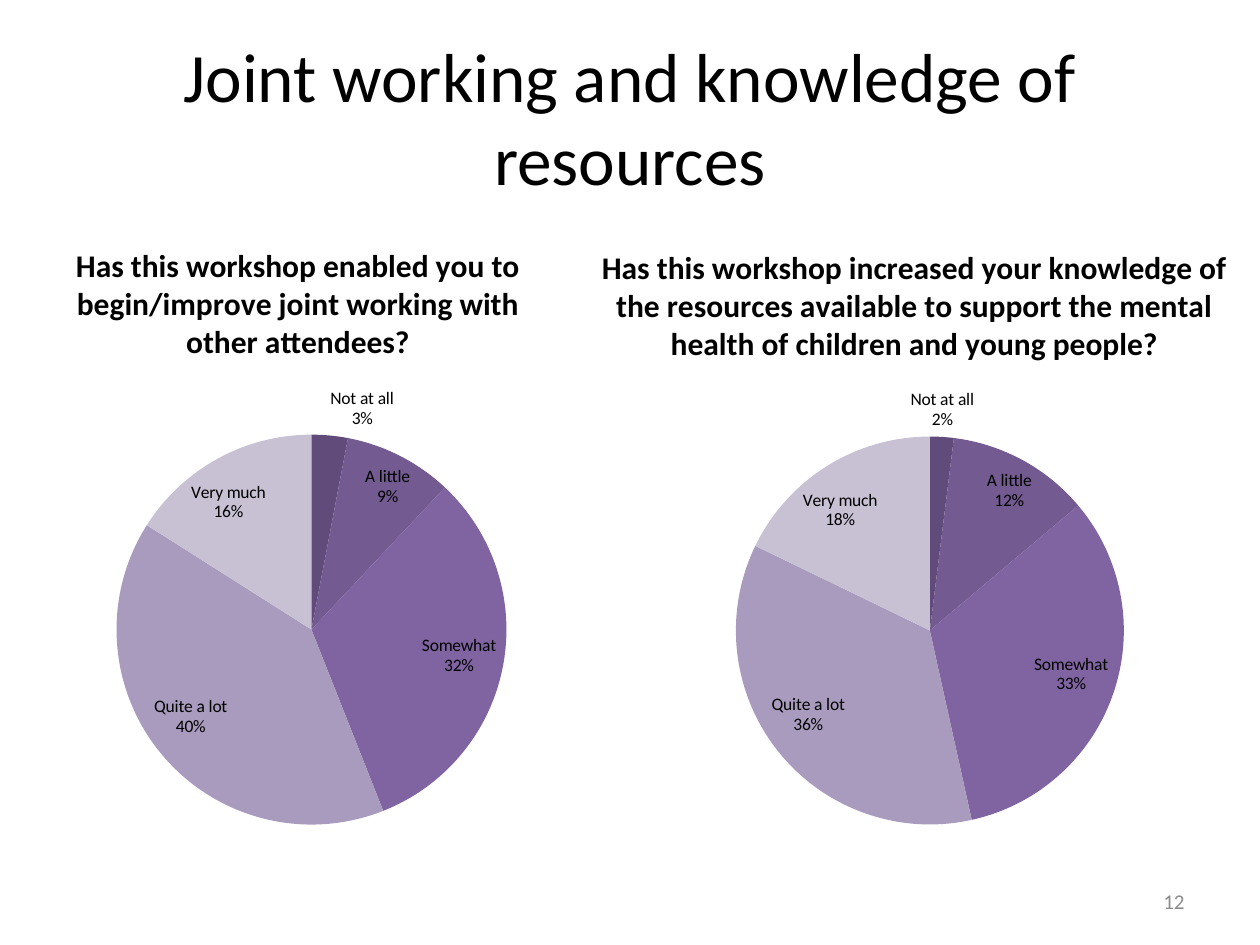
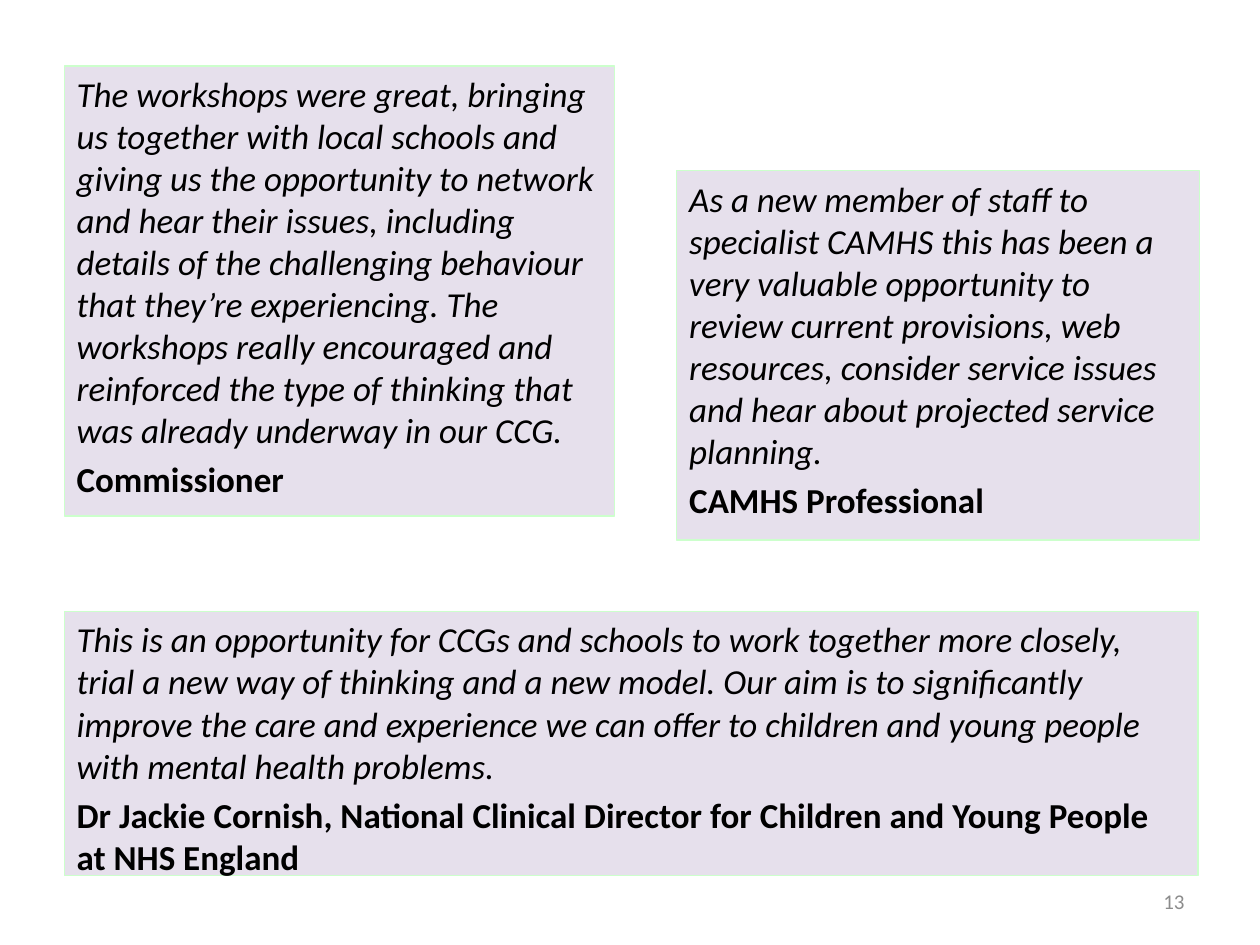
from lxml import etree
from pptx import Presentation
from pptx.chart.data import CategoryChartData
from pptx.dml.color import RGBColor
from pptx.enum.chart import XL_CHART_TYPE, XL_LABEL_POSITION
from pptx.enum.shapes import MSO_SHAPE
from pptx.enum.text import MSO_ANCHOR, MSO_AUTO_SIZE, PP_ALIGN
from pptx.oxml.ns import qn
from pptx.util import Inches, Pt

PIE = XL_CHART_TYPE.PIE
BEST_FIT = XL_LABEL_POSITION.BEST_FIT
RECTANGLE = MSO_SHAPE.RECTANGLE
TOP, MIDDLE = MSO_ANCHOR.TOP, MSO_ANCHOR.MIDDLE
NO_FIT = MSO_AUTO_SIZE.NONE
LEFT, CENTER, RIGHT = PP_ALIGN.LEFT, PP_ALIGN.CENTER, PP_ALIGN.RIGHT

BLACK = RGBColor(0x00, 0x00, 0x00)
GREY = RGBColor(0x8C, 0x8C, 0x8C)
LILAC = RGBColor(0xE6, 0xE0, 0xEC)
PALE_GREEN = RGBColor(0xCC, 0xFF, 0xCC)
SLICE_COLOURS = [
    RGBColor(0x60, 0x4B, 0x7A),
    RGBColor(0x73, 0x5A, 0x91),
    RGBColor(0x80, 0x64, 0xA2),
    RGBColor(0xA9, 0x9B, 0xBE),
    RGBColor(0xC8, 0xC1, 0xD4),
]

FONT = "Calibri"
COLUMNS, ROWS = 20, 15
TITLE_ONLY, TITLE_AND_BODY = 5, 1
ANSWERS = ["Not at all", "A little", "Somewhat", "Quite a lot", "Very much"]


class Deck:
    def __init__(self):
        self.file = Presentation()
        self.file.slide_width = Inches(10)
        self.file.slide_height = Inches(7.5)
        self.page = None

    def place(self, left, top, width, height):
        column = self.file.slide_width / COLUMNS
        row = self.file.slide_height / ROWS
        return [round(left * column), round(top * row),
                round(width * column), round(height * row)]

    def move(self, shape, area):
        shape.left, shape.top, shape.width, shape.height = self.place(*area)

    def style(self, font, size, colour=BLACK, bold=False, italic=False):
        font.name = FONT
        font.size = Pt(size)
        font.color.rgb = colour
        font.bold = bold
        font.italic = italic

    def add_page(self, layout, number):
        self.page = self.file.slides.add_slide(self.file.slide_layouts[layout])
        box = self.page.shapes.add_textbox(*self.place(14.34, 13.9, 4.66, 0.8))
        box.text_frame.word_wrap = True
        box.text_frame.vertical_anchor = MIDDLE
        para = box.text_frame.paragraphs[0]
        para.text = str(number)
        para.alignment = RIGHT
        self.style(para.font, 12, GREY)

    def title(self, text):
        box = self.page.shapes.title
        self.move(box, (1, 0.6, 18, 2.5))
        box.text_frame.auto_size = NO_FIT
        box.text_frame.vertical_anchor = MIDDLE
        para = box.text_frame.paragraphs[0]
        para.text = text
        para.alignment = CENTER
        self.style(para.font, 39.6)

    def drop_title(self):
        title = self.page.shapes.title.element
        title.getparent().remove(title)

    def quote(self, area, words, speaker, in_body=False):
        if in_body:
            box = self.page.placeholders[1]
            self.move(box, area)
        else:
            box = self.page.shapes.add_shape(RECTANGLE, *self.place(*area))
            box.shadow.inherit = False
        box.fill.solid()
        box.fill.fore_color.rgb = LILAC
        box.line.color.rgb = PALE_GREEN
        box.line.width = Pt(0.75)
        frame = box.text_frame
        frame.word_wrap = True
        frame.auto_size = NO_FIT
        frame.vertical_anchor = TOP
        for para, text, is_speaker in (
            (frame.paragraphs[0], words, False),
            (frame.add_paragraph(), speaker, True),
        ):
            para.text = text
            para.alignment = LEFT
            para.space_before = Pt(4 if is_speaker else 0)
            properties = para._p.get_or_add_pPr()
            properties.set("marL", "0")
            properties.set("indent", "0")
            etree.SubElement(properties, qn("a:buNone"))
            self.style(para.font, 20, bold=is_speaker, italic=not is_speaker)

    def pie(self, area, circle, question, values):
        data = CategoryChartData()
        data.categories = ANSWERS
        data.add_series("Series 1", values)
        frame = self.page.shapes.add_chart(PIE, *self.place(*area), data)
        chart = frame.chart
        self.style(chart.font, 10)
        chart.has_legend = False
        chart.has_title = True
        para = chart.chart_title.text_frame.paragraphs[0]
        para.text = question
        self.style(para.font, 18, bold=True)
        chart.chart_title.include_in_layout = False

        plot = chart.plots[0]
        plot.vary_by_categories = True
        series = plot.series[0]
        for index, colour in enumerate(SLICE_COLOURS):
            fill = series.points[index].format.fill
            fill.solid()
            fill.fore_color.rgb = colour
        labels = series.data_labels
        labels.show_value = False
        labels.show_category_name = True
        labels.show_percentage = True
        labels.number_format = "0%"
        labels.number_format_is_linked = False
        labels.position = BEST_FIT
        self.style(labels.font, 10)
        separator = etree.Element(qn("c:separator"))
        separator.text = "\n"
        chart.element.find(".//" + qn("c:showBubbleSize")).addnext(separator)
        self.fix_circle(chart, area, circle)

    def fix_circle(self, chart, area, circle):
        plot_area = chart.element.find(".//" + qn("c:plotArea"))
        for layout in plot_area.findall(qn("c:layout")):
            plot_area.remove(layout)
        layout = etree.Element(qn("c:layout"))
        plot_area.insert(0, layout)
        manual = etree.SubElement(layout, qn("c:manualLayout"))
        left, top, width, height = area
        circle_left, circle_top, diameter = circle
        for tag, value in (
            ("layoutTarget", "inner"),
            ("xMode", "edge"),
            ("yMode", "edge"),
            ("x", (circle_left - left) / width),
            ("y", (circle_top - top) / height),
            ("w", diameter / width),
            ("h", diameter / height),
        ):
            etree.SubElement(manual, qn("c:" + tag)).set("val", str(value))


def main():
    deck = Deck()

    deck.add_page(TITLE_ONLY, 12)
    deck.title("Joint working and knowledge of resources")
    deck.pie(
        (0, 3.47, 9.46, 9.9), (1.85, 6.9, 6.19),
        "Has this workshop enabled you to begin/improve joint working "
        "with other attendees?",
        [3, 9, 32, 40, 16],
    )
    deck.pie(
        (7.78, 3.5, 13.47, 9.86), (11.68, 6.93, 6.16),
        "Has this workshop increased your knowledge of the resources available "
        "to support the mental health of children and young people?",
        [2, 12, 33, 36, 18],
    )

    deck.add_page(TITLE_AND_BODY, 13)
    deck.drop_title()
    deck.quote(
        (10.74, 2.71, 8.3, 5.86),
        "As a new member of staff to specialist CAMHS this has been a very "
        "valuable opportunity to review current provisions, web resources, "
        "consider service issues and hear about projected service planning.",
        "CAMHS Professional",
        in_body=True,
    )
    deck.quote(
        (1.02, 9.71, 18, 4.19),
        "This is an opportunity for CCGs and schools to work together more "
        "closely, trial a new way of thinking and a new model. Our aim is to "
        "significantly improve the care and experience we can offer to children "
        "and young people with mental health problems.",
        "Dr Jackie Cornish, National Clinical Director for Children and "
        "Young People at NHS England",
    )
    deck.quote(
        (1.02, 1.05, 8.74, 7.14),
        "The workshops were great, bringing us together with local schools and "
        "giving us the opportunity to network and hear their issues, including "
        "details of the challenging behaviour that they’re experiencing. The "
        "workshops really encouraged and reinforced the type of thinking that "
        "was already underway in our CCG.",
        "Commissioner",
    )
    deck.file.save("out.pptx")


if __name__ == "__main__":
    main()
